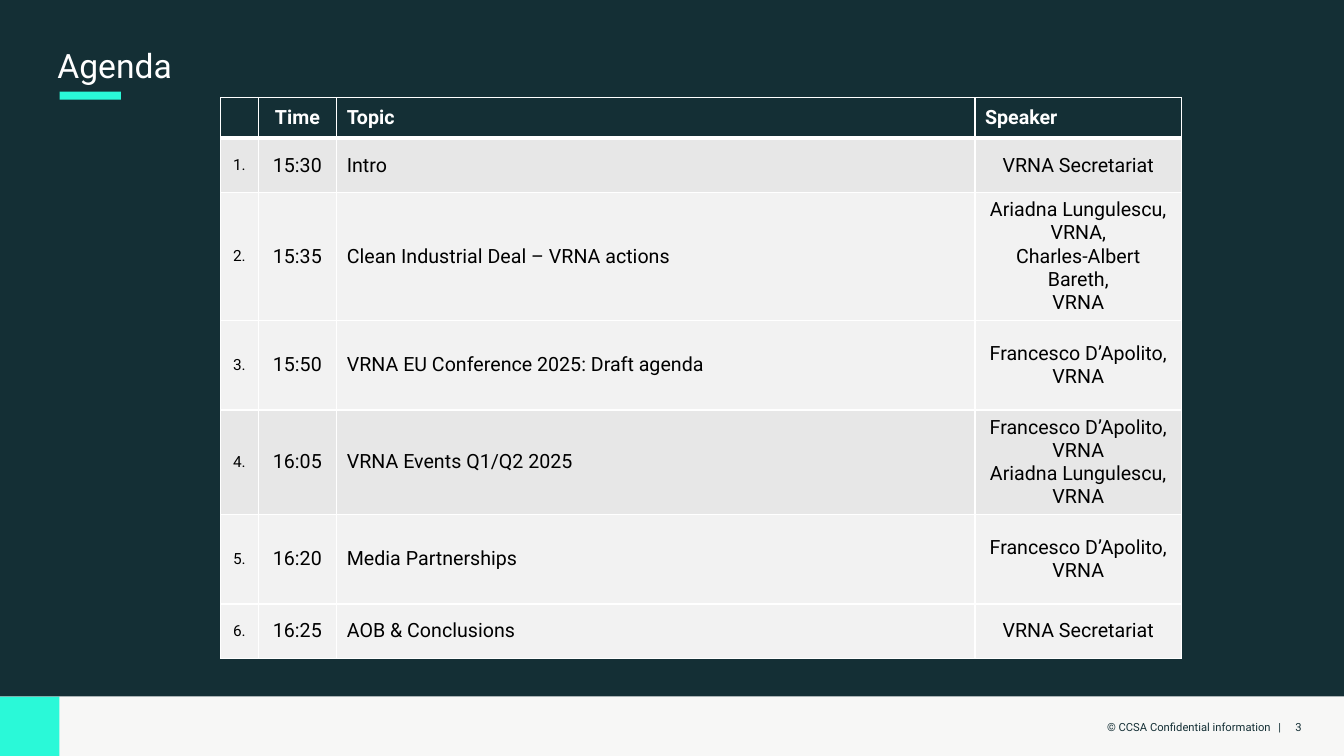
import pptx
import pptx.dml.color
import pptx.enum.shapes
import pptx.enum.text
import pptx.oxml
import pptx.oxml.ns
import pptx.util
from pptx.util import Inches

ALIGN = pptx.enum.text.PP_ALIGN
NAVY, TEAL, WHITE, BLACK = "142F35", "2AF9D8", "FFFFFF", "000000"
GREY, LIGHT = "E7E7E7", "F2F2F2"

COLUMN_WIDTHS = [0.37, 0.78, 6.33, 2.05]
ROW_HEIGHTS = [0.4, 0.54, 1.09, 0.89, 0.54, 0.89, 0.54]
HEADINGS = ["", "Time", "Topic", "Speaker"]
SESSIONS = [
    ("15:30", "Intro", "VRNA Secretariat", GREY),
    ("15:35", "Clean Industrial Deal – VRNA actions",
     "Ariadna Lungulescu, VRNA,\nCharles-Albert Bareth,\nVRNA", LIGHT),
    ("15:50", "VRNA EU Conference 2025: Draft agenda", "Francesco D’Apolito, VRNA", LIGHT),
    ("16:05", "VRNA Events Q1/Q2 2025",
     "Francesco D’Apolito, VRNA\nAriadna Lungulescu,\nVRNA", GREY),
    ("16:20", "Media Partnerships", "Francesco D’Apolito, VRNA", LIGHT),
    ("16:25", "AOB & Conclusions", "VRNA Secretariat", LIGHT),
]


def rgb(value):
    return pptx.dml.color.RGBColor.from_string(value)


def make_element(tag, **attributes):
    element = pptx.oxml.parse_xml(f"<a:{tag} {pptx.oxml.ns.nsdecls('a')}/>")
    for key, value in attributes.items():
        element.set(key, str(value))
    return element


def write_text(frame, text, size=14, color=BLACK, bold=False, align=ALIGN.LEFT,
               line_spacing=None, tab=None):
    frame.word_wrap = True
    frame.text = text
    for paragraph in frame.paragraphs:
        paragraph.alignment = align
        if line_spacing:
            paragraph.line_spacing = line_spacing
        if tab:
            tabs = make_element("tabLst")
            tabs.append(make_element("tab", pos=Inches(tab), algn="l"))
            paragraph._p.get_or_add_pPr().append(tabs)
        paragraph.font.size = pptx.util.Pt(size)
        paragraph.font.bold = bold
        for run in paragraph.runs:
            run.font.name = "Roboto"
            run.font.size = pptx.util.Pt(size)
            run.font.bold = bold
            run.font.color.rgb = rgb(color)


def add_block(slide, left, top, width, height, color, opacity=None):
    block = slide.shapes.add_shape(
        pptx.enum.shapes.MSO_SHAPE.RECTANGLE,
        Inches(left), Inches(top), Inches(width), Inches(height))
    block.shadow.inherit = False
    block.line.fill.background()
    block.fill.solid()
    block.fill.fore_color.rgb = rgb(color)
    if opacity:
        fill_color = block._element.spPr.find(".//" + pptx.oxml.ns.qn("a:srgbClr"))
        fill_color.append(make_element("alpha", val=opacity * 1000))


def add_label(slide, left, top, width, height, text, insets=(0.1, 0.05, 0.1, 0.05), **style):
    label = slide.shapes.add_textbox(Inches(left), Inches(top), Inches(width), Inches(height))
    frame = label.text_frame
    frame.margin_left, frame.margin_top, frame.margin_right, frame.margin_bottom = map(Inches, insets)
    write_text(frame, text, **style)
    return frame


def add_border(cell, side, width):
    border = make_element(f"ln{side}", w=pptx.util.Pt(width))
    fill = make_element("solidFill")
    fill.append(make_element("srgbClr", val=WHITE))
    border.append(fill)
    cell._tc.get_or_add_tcPr().append(border)


def fill_cell(cell, text, background, bottom=1, **style):
    for side in "LRTB":
        add_border(cell, side, bottom if side == "B" else 1)
    cell.fill.solid()
    cell.fill.fore_color.rgb = rgb(background)
    cell.vertical_anchor = pptx.enum.text.MSO_ANCHOR.MIDDLE
    write_text(cell.text_frame, text, **style)


def add_agenda(slide):
    agenda = slide.shapes.add_table(
        len(ROW_HEIGHTS), len(COLUMN_WIDTHS), Inches(2.19), Inches(0.97),
        Inches(sum(COLUMN_WIDTHS)), Inches(sum(ROW_HEIGHTS))).table
    for column, width in zip(agenda.columns, COLUMN_WIDTHS):
        column.width = Inches(width)
    for row, height in zip(agenda.rows, ROW_HEIGHTS):
        row.height = Inches(height)

    heading_aligns = [ALIGN.CENTER, ALIGN.CENTER, ALIGN.LEFT, ALIGN.LEFT]
    for index, (heading, align) in enumerate(zip(HEADINGS, heading_aligns)):
        fill_cell(agenda.cell(0, index), heading, NAVY, bottom=3,
                  color=WHITE, bold=True, align=align)

    for number, (time, topic, speaker, background) in enumerate(SESSIONS, 1):
        for index, text in enumerate([f"{number}.", time, topic, speaker]):
            fill_cell(agenda.cell(number, index), text, background,
                      size=11 if index == 0 else 14,
                      align=ALIGN.LEFT if index == 2 else ALIGN.CENTER)


def main():
    presentation = pptx.Presentation()
    presentation.slide_width = Inches(13.33)
    presentation.slide_height = Inches(7.5)
    slide = presentation.slides.add_slide(presentation.slide_layouts[6])

    add_block(slide, 0, 6.91, 13.33, 0.59, "E0E1DD", opacity=25)
    add_label(slide, 12.61, 7.1, 0.3, 0.15, "3", insets=(0.1, 0.05, 0, 0.05),
              size=8, color=NAVY, align=ALIGN.RIGHT)
    add_block(slide, 0, 6.91, 0.59, 0.59, TEAL)
    add_label(slide, 7.56, 7.1, 5.26, 0.26, "© CCSA Confidential information\t|",
              insets=(3.42, 0.05, 0.05, 0.05), size=8, color=NAVY, tab=1.7)
    add_block(slide, 0, 0, 13.33, 6.91, NAVY)
    title = add_label(slide, 0.57, 0.14, 7.76, 0.61, "Agenda", insets=(0, 0, 0, 0),
                      size=24, color=WHITE, line_spacing=pptx.util.Pt(50.6))
    title.auto_size = pptx.enum.text.MSO_AUTO_SIZE.SHAPE_TO_FIT_TEXT
    add_block(slide, 0.59, 0.91, 0.61, 0.08, TEAL)
    add_agenda(slide)

    presentation.save("out.pptx")


if __name__ == "__main__":
    main()
